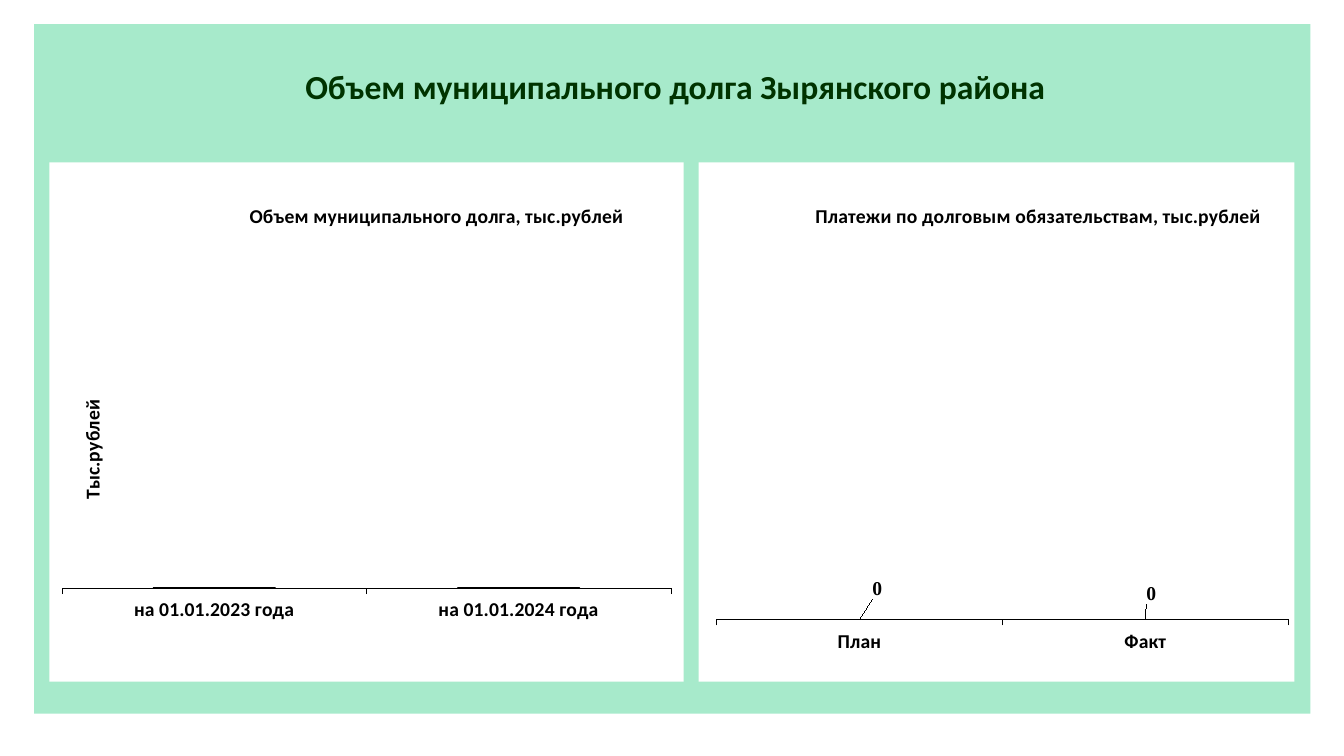
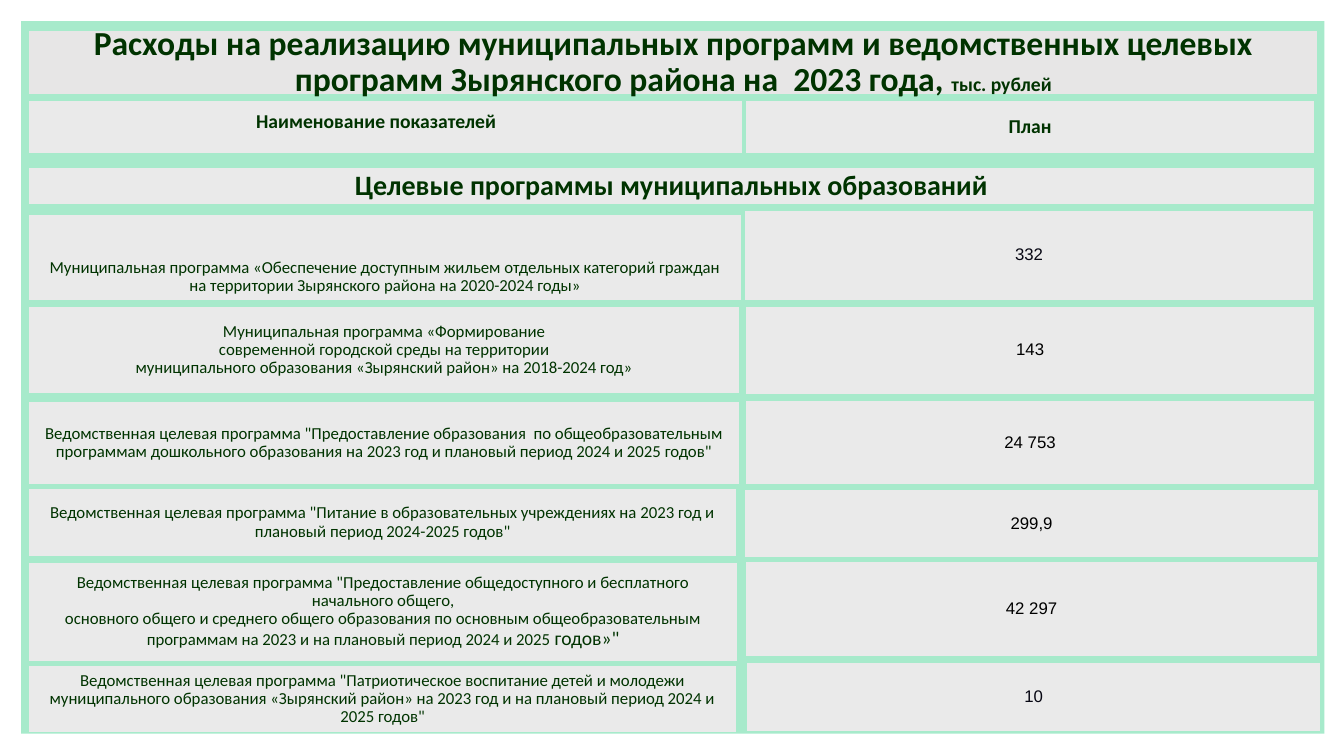
from dataclasses import dataclass

from lxml import etree
from pptx import Presentation
from pptx.chart import data as chart_data
from pptx.dml.color import RGBColor
from pptx.enum import chart as charts, shapes, text
from pptx.oxml import ns, parse_xml
from pptx.util import Pt

COLORS = {
    "mint": "A7EACB",
    "title": "E7E6E6",
    "cell": "EAEAEA",
    "green": "003300",
    "navy": "060612",
    "black": "000000",
    "white": "FFFFFF",
    "bar": "00B050",
    "light_bar": "9BD878",
}
CELL_LEFT = 21
MIDDLE = text.MSO_ANCHOR.MIDDLE
BOTTOM = text.MSO_ANCHOR.BOTTOM


@dataclass(frozen=True)
class Area:
    left: float
    top: float
    width: float
    height: float

    def lengths(self) -> tuple:
        return Pt(self.left), Pt(self.top), Pt(self.width), Pt(self.height)


@dataclass(frozen=True)
class Style:
    size: float
    bold: bool = False
    font: str = "Calibri"
    color: str = "green"
    spacing: float = 0.9


@dataclass(frozen=True)
class Row:
    """One programme: its name cell, its value cell and their texts."""
    name: Area
    lines: tuple[str, ...]
    value: Area
    amount: str
    color: str = "black"
    tail: str = ""
    anchor: text.MSO_ANCHOR = MIDDLE


@dataclass(frozen=True)
class DebtChart:
    area: Area
    kind: charts.XL_CHART_TYPE
    title: str
    title_at: tuple[float, float]
    categories: tuple[str, ...]
    plot: tuple[float, float, float, float]
    axis_title: str = ""
    axis_title_at: tuple[float, float] = (0, 0)
    label_shifts: tuple[tuple[float, float], ...] = ()


TITLE = Style(24, bold=True)
SECTION = Style(20, bold=True)
HEADER = Style(14, bold=True)
HEADER_BOX = Style(14, bold=True, spacing=1)
NAME = Style(12)

DEBT_CHARTS = (
    DebtChart(
        Area(499, 116, 425.5, 371), charts.XL_CHART_TYPE.COLUMN_STACKED,
        "Платежи по долговым обязательствам, тыс.рублей", (0.19, 0.07),
        ("План", "Факт"), (0.03, 0.16, 0.96, 0.72),
        label_shifts=((0.03, -0.06), (0.01, -0.05))),
    DebtChart(
        Area(35.3, 116, 453, 371), charts.XL_CHART_TYPE.COLUMN_CLUSTERED,
        "Объем муниципального долга, тыс.рублей", (0.31, 0.07),
        ("на 01.01.2023 года", "на 01.01.2024 года"), (0.02, 0.13, 0.96, 0.69),
        axis_title="Тыс.рублей", axis_title_at=(0.04, 0.45)),
)

ROWS = (
    Row(Area(CELL_LEFT, 153.4, 508.3, 61.2),
        ("Муниципальная программа «Обеспечение доступным жильем отдельных категорий "
         "граждан на территории Зырянского района на 2020-2024 годы»",),
        Area(532, 150.5, 406, 64), "332", "navy", anchor=BOTTOM),
    Row(Area(CELL_LEFT, 219, 507, 62),
        ("Муниципальная программа «Формирование",
         "современной городской среды на территории",
         "муниципального образования «Зырянский район» на 2018-2024 год»"),
        Area(532.8, 219, 406, 62.6), "143"),
    Row(Area(CELL_LEFT, 287.3, 507, 58.3),
        ('Ведомственная целевая программа "Предоставление образования  по '
         "общеобразовательным программам дошкольного образования на 2023 год "
         'и плановый период 2024 и 2025 годов"',),
        Area(532.8, 286.6, 406, 59), "24 753"),
    Row(Area(CELL_LEFT, 349.2, 504.7, 48.2),
        ('Ведомственная целевая программа "Питание в образовательных учреждениях '
         'на 2023 год и плановый период 2024-2025 годов"',),
        Area(532, 350, 409.7, 48.2), "299,9"),
    Row(Area(CELL_LEFT, 401.8, 505.4, 70.6),
        ('Ведомственная целевая программа "Предоставление общедоступного и '
         "бесплатного начального общего,",
         "основного общего и среднего общего образования по основным "
         "общеобразовательным программам на 2023 и на плановый период 2024 и 2025 "),
        Area(532.8, 401.8, 408.2, 67), "42 297", tail='годов»"'),
    Row(Area(CELL_LEFT, 476, 504.7, 46.8),
        ('Ведомственная целевая программа "Патриотическое воспитание детей и молодежи '
         "муниципального образования «Зырянский район» на 2023 год и на плановый "
         'период 2024 и 2025 годов"',),
        Area(533.5, 473.8, 409.7, 48.2), "10", "navy"),
)


def rgb(name: str) -> RGBColor:
    return RGBColor.from_string(COLORS[name])


def set_font(font, style: Style) -> None:
    font.size, font.bold, font.name = Pt(style.size), style.bold, style.font
    font.color.rgb = rgb(style.color)


def write(frame, lines: tuple[str, ...], style: Style, tail: str = "",
          anchor=MIDDLE) -> None:
    """Fill a frame with centred lines; the tail ends the last one at 14 points."""
    frame.word_wrap = True
    frame.vertical_anchor = anchor
    for index, line in enumerate(lines):
        para = frame.add_paragraph() if index else frame.paragraphs[0]
        para.alignment = text.PP_ALIGN.CENTER
        para.line_spacing = style.spacing
        set_font(para.font, style)
        para.add_run().text = line
    if tail:
        span = para.add_run()
        span.text = tail
        span.font.size = Pt(14)


def add_block(page, area: Area, color: str,
              kind=shapes.MSO_SHAPE.ACTION_BUTTON_CUSTOM):
    block = page.shapes.add_shape(kind, *area.lengths())
    block.shadow.inherit = False
    block.fill.solid()
    block.fill.fore_color.rgb = rgb(color)
    block.line.fill.background()
    return block


def add_cell(page, area: Area, lines: tuple[str, ...], style: Style,
             color: str = "cell", tail: str = "", anchor=MIDDLE) -> None:
    write(add_block(page, area, color).text_frame, lines, style, tail, anchor)


def add_label(page, area: Area, line: str, style: Style) -> None:
    write(page.shapes.add_textbox(*area.lengths()).text_frame, (line,), style)


def add_page(deck, panel: Area):
    page = deck.slides.add_slide(deck.slide_layouts[6])
    add_block(page, panel, "mint", shapes.MSO_SHAPE.RECTANGLE)
    return page


def set_layout(element, index: int, modes: dict[str, str],
               values: tuple[float, ...]) -> None:
    """Give a chart element a manual layout as its child number index."""
    for old in element.findall(ns.qn("c:layout")):
        element.remove(old)
    layout = etree.Element(ns.qn("c:layout"))
    manual = etree.SubElement(layout, ns.qn("c:manualLayout"))
    fractions = dict(zip("xywh", values))
    for tag, value in {**modes, **fractions}.items():
        etree.SubElement(manual, ns.qn(f"c:{tag}")).set("val", str(value))
    element.insert(index, layout)


def set_title(title, line: str, place: tuple[float, float]) -> None:
    para = title.text_frame.paragraphs[0]
    para.add_run().text = line
    set_font(para.font, Style(14, True, color="black"))
    set_layout(title._element, 1, {"xMode": "edge", "yMode": "edge"}, place)


def add_debt_chart(page, item: DebtChart) -> None:
    source = chart_data.CategoryChartData(number_format="0")
    source.categories = item.categories
    source.add_series("Series 1", [0] * len(item.categories))
    chart = page.shapes.add_chart(item.kind, *item.area.lengths(), source).chart
    label_style = Style(14, True, "Times New Roman", "black")
    set_font(chart.font, label_style)
    chart.has_legend = False
    chart.has_title = True
    set_title(chart.chart_title, item.title, item.title_at)
    space = chart._chartSpace
    space.find(ns.qn("c:chart")).addnext(parse_xml(
        f'<c:spPr {ns.nsdecls("c", "a")}><a:solidFill><a:srgbClr '
        f'val="{COLORS["white"]}"/></a:solidFill><a:ln><a:noFill/></a:ln></c:spPr>'))
    set_layout(space.find(".//" + ns.qn("c:plotArea")), 0,
               {"layoutTarget": "inner", "xMode": "edge", "yMode": "edge"}, item.plot)

    axis = chart.category_axis
    axis.tick_label_position = charts.XL_TICK_LABEL_POSITION.LOW
    axis.major_tick_mark = charts.XL_TICK_MARK.OUTSIDE
    set_font(axis.tick_labels.font, Style(14, True, color="black"))
    axis.format.line.color.rgb = rgb("black")
    axis.format.line.width = Pt(0.25)
    chart.value_axis.has_major_gridlines = False
    chart.value_axis.visible = False
    if item.axis_title:
        title = chart.value_axis.axis_title
        set_title(title, item.axis_title, item.axis_title_at)
        title.text_frame._txBody.bodyPr.set("rot", "-5400000")
        title.text_frame._txBody.bodyPr.set("vert", "horz")

    plot = chart.plots[0]
    plot.gap_width = 150
    plot.vary_by_categories = False
    series = plot.series[0]
    for part, color in ((series, "bar"), (series.points[1], "light_bar")):
        part.format.fill.solid()
        part.format.fill.fore_color.rgb = rgb(color)
        part.format.line.color.rgb = rgb("black")
        part.format.line.width = Pt(1)
    for index, shift in enumerate(item.label_shifts):
        font = series.points[index].data_label.font
        set_font(font, label_style)
        label = series._element.findall(".//" + ns.qn("c:dLbl"))[index]
        set_layout(label, 1, {}, shift)


def build_debt_page(deck) -> None:
    page = add_page(deck, Area(24.5, 17.3, 911.5, 492.5))
    add_label(page, Area(53.3, 46.8, 858.2, 33),
              "Объем муниципального долга Зырянского района", TITLE)
    for item in DEBT_CHARTS:
        add_debt_chart(page, item)


def build_programme_page(deck) -> None:
    page = add_page(deck, Area(15.1, 15.1, 931, 509))
    add_cell(page, Area(CELL_LEFT, 22.3, 920, 44.6),
             ("Расходы на реализацию муниципальных программ и ведомственных целевых "
              "программ Зырянского района на  2023 года, ",),
             TITLE, "title", "тыс. рублей")
    add_block(page, Area(CELL_LEFT, 72, 509, 37.4), "cell")
    add_label(page, Area(CELL_LEFT, 74.2, 495.4, 23.8),
              "Наименование показателей", HEADER_BOX)
    add_cell(page, Area(532.8, 72, 406, 37.4), ("План",), HEADER)
    add_cell(page, Area(CELL_LEFT, 120.3, 917.3, 25.2),
             ("Целевые программы муниципальных образований",), SECTION)
    for row in ROWS:
        add_cell(page, row.name, row.lines, NAME, tail=row.tail, anchor=row.anchor)
        add_cell(page, row.value, (row.amount,), Style(12, False, "Arial", row.color))


def main() -> None:
    deck = Presentation()
    deck.slide_width, deck.slide_height = Pt(960), Pt(540)
    build_debt_page(deck)
    build_programme_page(deck)
    deck.save("out.pptx")


if __name__ == "__main__":
    main()
